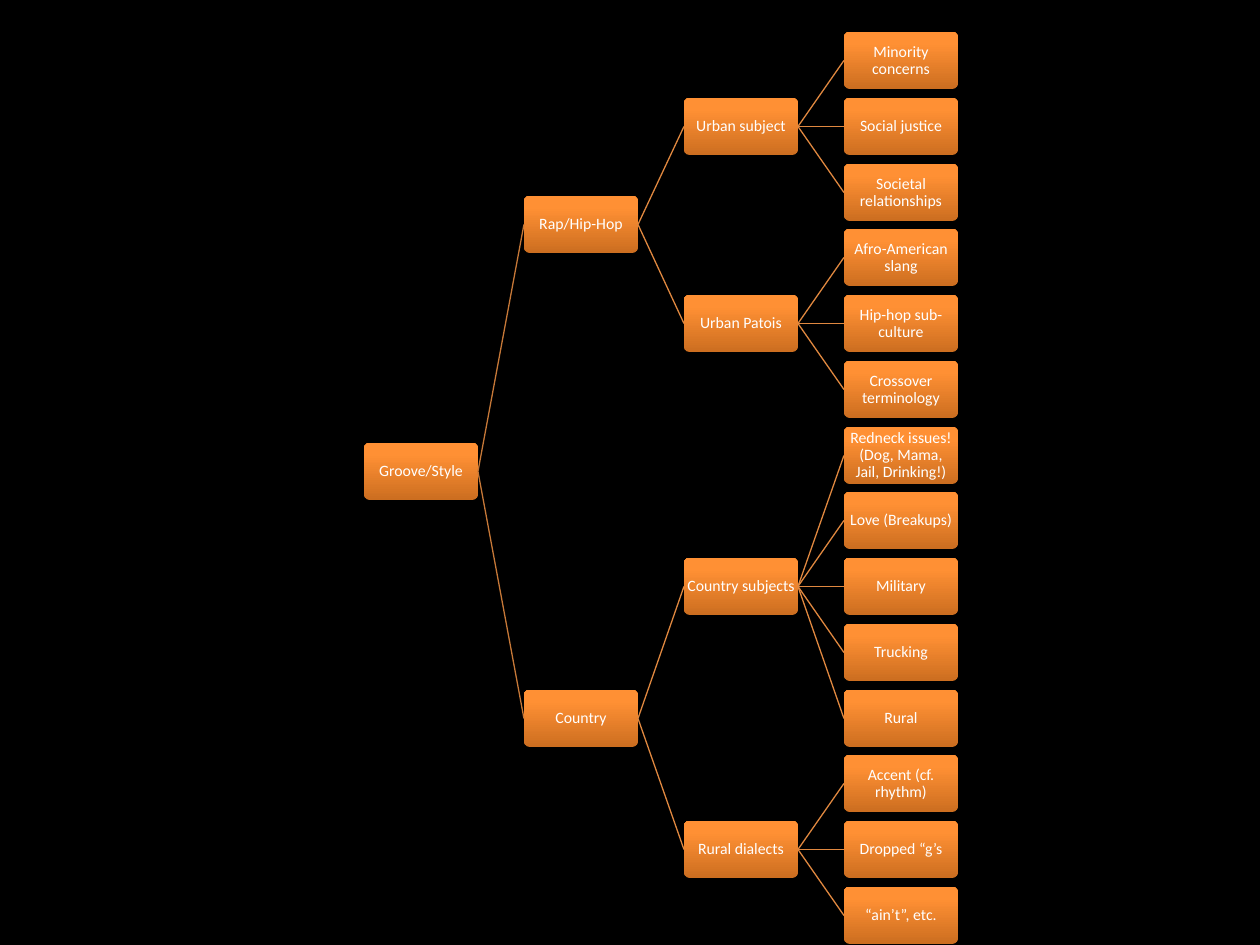
from dataclasses import dataclass

from lxml.etree import SubElement
from pptx import Presentation
from pptx.dml.color import RGBColor
from pptx.enum.shapes import MSO_CONNECTOR, MSO_SHAPE
from pptx.enum.text import MSO_ANCHOR, PP_ALIGN
from pptx.oxml.ns import qn
from pptx.util import Pt

PX = 914400 // 126
SLIDE_W, SLIDE_H = 1260, 945
NODE_W, NODE_H = 114, 57
LEFT, COLUMN_STEP = 364, 160
FIRST_TOP, LAST_TOP = 32, 887
RIGHT_SIDE, LEFT_SIDE = 3, 1

TREE = ("Groove/Style", [
    ("Rap/Hip-Hop", [
        ("Urban subject", ["Minority concerns", "Social justice",
                           "Societal relationships"]),
        ("Urban Patois", ["Afro-American slang", "Hip-hop sub-culture",
                          "Crossover terminology"]),
    ]),
    ("Country", [
        ("Country subjects", ["Redneck issues! (Dog, Mama, Jail, Drinking!)",
                              "Love (Breakups)", "Military", "Trucking",
                              "Rural"]),
        ("Rural dialects", ["Accent (cf. rhythm)", "Dropped “g’s",
                            "“ain’t”, etc."]),
    ]),
])


@dataclass(frozen=True)
class Theme:
    background: str = "000000"
    text: str = "FFFFFF"
    shadow: str = "000000"
    node_stops: tuple = ((0, "CC6E20"), (80, "FF9034"), (100, "FF9136"))
    root_line: str = "C67838"
    branch_line: str = "E08840"
    font: str = "Calibri"
    node_size: float = 9
    line_width: float = 0.75


def px(n):
    return n * PX


def rgb(value):
    return RGBColor.from_string(value)


def put_text(tf, text, font, size, color, margin=1, spacing=0.9):
    tf.word_wrap = True
    tf.vertical_anchor = MSO_ANCHOR.MIDDLE
    tf.margin_left = tf.margin_right = px(margin)
    tf.margin_top = tf.margin_bottom = px(margin)
    p = tf.paragraphs[0]
    p.alignment = PP_ALIGN.CENTER
    p.line_spacing = spacing
    r = p.add_run()
    r.text = text
    r.font.name = font
    r.font.size = Pt(size)
    r.font.color.rgb = rgb(color)


class TreeSlide:
    def __init__(self, slide, theme):
        self.s = slide
        self.theme = theme
        fill = slide.background.fill
        fill.solid()
        fill.fore_color.rgb = rgb(theme.background)

    def shade(self, sp):
        """Fill with the upward three-stop gradient."""
        sp.fill.gradient()
        sp.fill.gradient_angle = 90
        stops = sp._element.spPr.find(qn("a:gradFill")).find(qn("a:gsLst"))
        for stop in list(stops):
            stops.remove(stop)
        for percent, color in self.theme.node_stops:
            stop = SubElement(stops, qn("a:gs"), pos=str(percent * 1000))
            SubElement(stop, qn("a:srgbClr"), val=color)

    def drop_shadow(self, sp):
        sp.shadow.inherit = False
        effects = sp._element.spPr.find(qn("a:effectLst"))
        outer = SubElement(effects, qn("a:outerShdw"), blurRad="40000",
                           dist="23000", dir="5400000", rotWithShape="0")
        color = SubElement(outer, qn("a:srgbClr"), val=self.theme.shadow)
        SubElement(color, qn("a:alpha"), val="35000")

    def node(self, text, x, y):
        sp = self.s.shapes.add_shape(MSO_SHAPE.ROUNDED_RECTANGLE, px(x), px(y),
                                     px(NODE_W), px(NODE_H))
        sp.adjustments[0] = 0.1
        self.shade(sp)
        sp.line.fill.background()
        self.drop_shadow(sp)
        put_text(sp.text_frame, text, font=self.theme.font,
                 size=self.theme.node_size, color=self.theme.text)
        return sp

    def link(self, parent, child, color):
        line = self.s.shapes.add_connector(MSO_CONNECTOR.STRAIGHT, 0, 0, 0, 0)
        line.begin_connect(parent, RIGHT_SIDE)
        line.end_connect(child, LEFT_SIDE)
        line.line.color.rgb = rgb(color)
        line.line.width = Pt(self.theme.line_width)
        SubElement(line._element.spPr, qn("a:effectLst"))

    def branch(self, tree, rows, row_step, level=0):
        """Draw a subtree; return its node and row, midway between its outer children."""
        text, children = (tree, []) if isinstance(tree, str) else tree
        drawn = [self.branch(c, rows, row_step, level + 1) for c in children]
        row = (drawn[0][1] + drawn[-1][1]) / 2 if drawn else next(rows)
        sp = self.node(text, LEFT + level * COLUMN_STEP,
                       round(FIRST_TOP + row * row_step))
        color = self.theme.branch_line if level else self.theme.root_line
        for child, _ in drawn:
            self.link(sp, child, color)
        return sp, row


def count_leaves(tree):
    return 1 if isinstance(tree, str) else sum(map(count_leaves, tree[1]))


def main():
    prs = Presentation()
    prs.slide_width, prs.slide_height = px(SLIDE_W), px(SLIDE_H)
    s = prs.slides.add_slide(prs.slide_layouts[6])
    leaves = count_leaves(TREE)
    row_step = (LAST_TOP - FIRST_TOP) / (leaves - 1)
    TreeSlide(s, Theme()).branch(TREE, iter(range(leaves)), row_step)
    prs.save("out.pptx")


if __name__ == "__main__":
    main()
